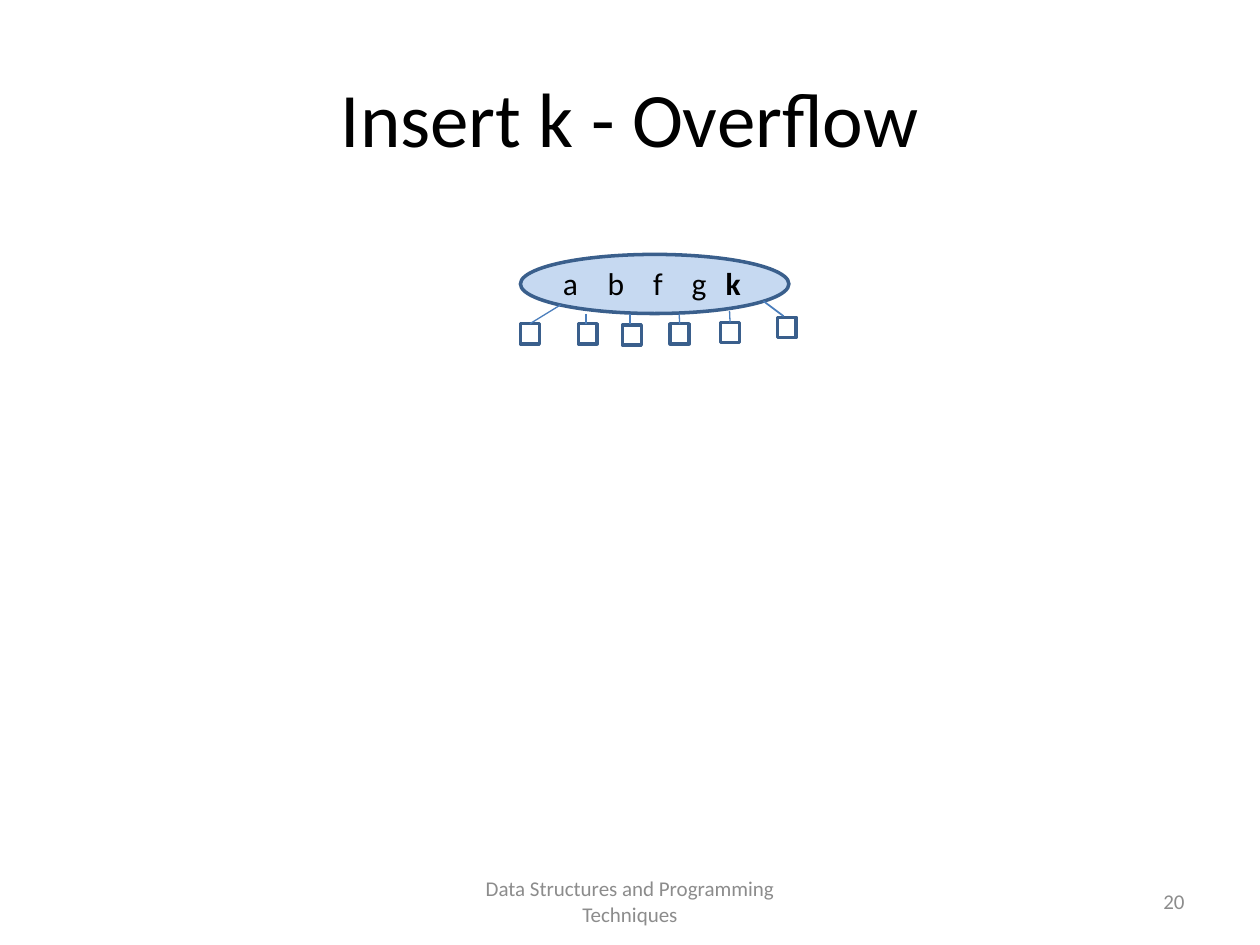
from lxml.etree import SubElement
from pptx import Presentation
from pptx.dml.color import RGBColor
from pptx.enum.shapes import MSO_CONNECTOR as Connector, MSO_SHAPE as Shape
from pptx.enum.text import MSO_ANCHOR as Anchor, PP_ALIGN as Align
from pptx.oxml.ns import qn
from pptx.util import Pt

COLORS = {
    "text": "000000",
    "footer": "8C8C8C",
    "node": "C6D9F1",
    "outline": "3A5F8C",
    "link": "4B7EBC",
}
FONT = "Calibri"
LEAF_WIDTH, LEAF_HEIGHT = 10.8, 11.5
KEY_STOPS = [25.5, 51.5, 73.5, 93]
# leaf left, leaf top, link start, link end, link width
CHILDREN = [
    (297.4, 185, (320.4, 174.2), (302.8, 185), 0.75),
    (330.5, 185, (334.8, 179.3), (334.8, 185), 0.75),
    (355.7, 185.8, (360, 179.3), (360, 185), 0.75),
    (383, 185, (388.1, 179.3), (388.1, 185), 0.75),
    (411.8, 184.3, (416.9, 177.8), (416.9, 185), 0.75),
    (444.2, 181.4, (436.3, 172.1), (447.8, 180.7), 1),
]


def color(name):
    return RGBColor.from_string(COLORS[name])


def add_text(page, bounds, text, size, align, tint="text", anchor=Anchor.MIDDLE):
    box = page.shapes.add_textbox(*map(Pt, bounds))
    frame = box.text_frame
    frame.word_wrap = True
    frame.vertical_anchor = anchor
    frame.text = text
    paragraph = frame.paragraphs[0]
    paragraph.alignment = align
    for span in paragraph.runs:
        span.font.name = FONT
        span.font.size = Pt(size)
        span.font.color.rgb = color(tint)
    return paragraph


def add_outlined(page, kind, bounds, fill=None):
    shape = page.shapes.add_shape(kind, *map(Pt, bounds))
    shape.shadow.inherit = False
    if fill:
        shape.fill.solid()
        shape.fill.fore_color.rgb = color(fill)
    else:
        shape.fill.background()
    shape.line.color.rgb = color("outline")
    shape.line.width = Pt(2)
    return shape


def add_link(page, start, end, width):
    link = page.shapes.add_connector(Connector.STRAIGHT, *map(Pt, start + end))
    link.line.color.rgb = color("link")
    link.line.width = Pt(width)
    SubElement(link._element.spPr, qn("a:effectLst"))
    return link


def add_keys(page):
    paragraph = add_text(page, (314.6, 147.6, 118.1, 28.8), "a\tb\tf\tg\t", 18,
                         Align.LEFT, anchor=Anchor.TOP)
    tabs = SubElement(paragraph._p.get_or_add_pPr(), qn("a:tabLst"))
    for stop in KEY_STOPS:
        SubElement(tabs, qn("a:tab"), pos=str(Pt(stop)), algn="l")
    new_key = paragraph.add_run()
    new_key.text = "k"
    new_key.font.name = FONT
    new_key.font.size = Pt(18)
    new_key.font.bold = True
    new_key.font.color.rgb = color("text")


def add_child(page, left, top, start, end, width):
    leaf = add_outlined(page, Shape.RECTANGLE, (left, top, LEAF_WIDTH, LEAF_HEIGHT))
    link = add_link(page, start, end, width)
    if abs(left + LEAF_WIDTH / 2 - end[0]) < 0.5:
        link.end_connect(leaf, 0)


def main():
    deck = Presentation()
    deck.slide_width, deck.slide_height = Pt(720), Pt(540)
    page = deck.slides.add_slide(deck.slide_layouts[6])
    add_text(page, (36, 21.6, 648, 90), "Insert k - Overflow", 44, Align.CENTER)
    add_text(page, (246, 500.5, 228, 28.8),
             "Data Structures and Programming Techniques", 12, Align.CENTER, "footer")
    add_text(page, (516, 500.5, 168, 28.8), "20", 12, Align.RIGHT, "footer")
    add_outlined(page, Shape.OVAL, (297.4, 145.4, 153.4, 33.8), "node")
    add_keys(page)
    for child in CHILDREN:
        add_child(page, *child)
    deck.save("out.pptx")


if __name__ == "__main__":
    main()
